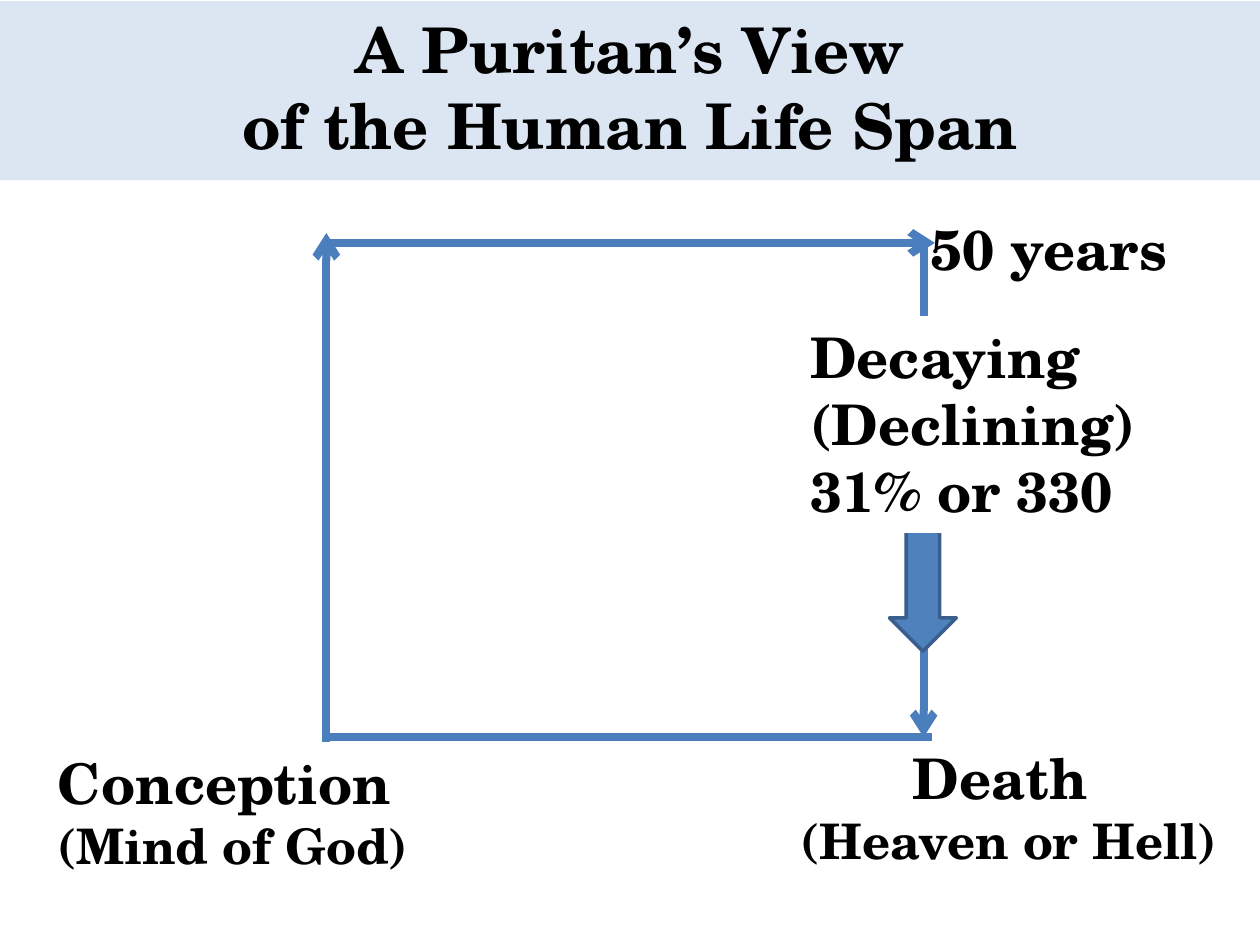
from lxml import etree
from pptx import Presentation
from pptx.dml.color import RGBColor
from pptx.enum.shapes import MSO_CONNECTOR, MSO_SHAPE
from pptx.enum.text import MSO_ANCHOR, MSO_AUTO_SIZE, PP_ALIGN
from pptx.oxml.ns import qn
from pptx.util import Pt

LEFT, CENTER = PP_ALIGN.LEFT, PP_ALIGN.CENTER
RECTANGLE, RIGHT_ARROW = MSO_SHAPE.RECTANGLE, MSO_SHAPE.RIGHT_ARROW
TOP, MIDDLE = MSO_ANCHOR.TOP, MSO_ANCHOR.MIDDLE
STRAIGHT, NO_AUTOFIT = MSO_CONNECTOR.STRAIGHT, MSO_AUTO_SIZE.NONE

FONT = "TeX Gyre Schola"
COLORS = {
    "text": "000000",
    "paper": "FFFFFF",
    "band": "DCE6F2",
    "span": "4B7EBC",
    "decline": "4F81BD",
    "decline edge": "3A5F8C",
}

TITLE = [("A Puritan’s View", 36), ("of the Human Life Span", 36)]
DEATH = [("Death ", 32), ("(Heaven or Hell)", 28)]
CONCEPTION = [("Conception ", 32), ("(Mind of God)", 28)]
DECAY = [("Decaying", 32), ("(Declining)", 32), ("31% or 330", 32)]
AGE = [("50 years", 32)]

BIRTH_X, DEATH_X = 186.5, 527.8
PEAK_Y, END_Y = 138.8, 421.2
LIFE_LINES = [
    ((BIRTH_X, 463), (BIRTH_X, 133.2), True),
    ((BIRTH_X - 0.7, PEAK_Y), (534.2, PEAK_Y), True),
    ((DEATH_X, PEAK_Y - 0.6), (DEATH_X, END_Y), True),
    ((532.8, END_Y), (184.3, END_Y), False),
]


def rgb(name):
    return RGBColor.from_string(COLORS[name])


def write(frame, lines, align, anchor=TOP):
    frame.word_wrap = True
    frame.auto_size = NO_AUTOFIT
    frame.vertical_anchor = anchor
    for i, (line, size) in enumerate(lines):
        paragraph = frame.paragraphs[0] if i == 0 else frame.add_paragraph()
        paragraph.text = line
        paragraph.alignment = align
        font = paragraph.font
        font.name, font.size, font.bold = FONT, Pt(size), True
        font.color.rgb = rgb("text")


def add_label(slide, lines, box, align):
    label = slide.shapes.add_textbox(*map(Pt, box))
    write(label.text_frame, lines, align)
    return label


def add_block(slide, preset, box, fill):
    block = slide.shapes.add_shape(preset, *map(Pt, box))
    block.shadow.inherit = False
    block.fill.solid()
    block.fill.fore_color.rgb = rgb(fill)
    block.line.fill.background()
    return block


def add_life_line(slide, start, end, has_arrow):
    life_line = slide.shapes.add_connector(STRAIGHT, *map(Pt, start + end))
    life_line.line.color.rgb = rgb("span")
    life_line.line.width = Pt(4.5)
    if has_arrow:
        etree.SubElement(life_line.line._get_or_add_ln(), qn("a:tailEnd"), type="arrow")
    etree.SubElement(life_line._element.spPr, qn("a:effectLst"))


def main():
    deck = Presentation()
    deck.slide_width, deck.slide_height = Pt(720), Pt(540)
    slide = deck.slides.add_slide(deck.slide_layouts[5])

    band = add_block(slide, RECTANGLE, (0, 0.7, 720, 102.3), "band")
    slide.shapes._spTree.insert(2, band._element)
    title = slide.shapes.title
    title.left, title.top, title.width, title.height = map(Pt, (0, 2.2, 720, 94.3))
    write(title.text_frame, TITLE, CENTER, MIDDLE)

    add_label(slide, DEATH, (444.2, 421.2, 264.2, 80), CENTER)
    for start, end, has_arrow in LIFE_LINES:
        add_life_line(slide, start, end, has_arrow)

    conception = add_block(slide, RECTANGLE, (23.8, 424.1, 218.2, 80), "paper")
    write(conception.text_frame, CONCEPTION, CENTER)

    decline = add_block(slide, RIGHT_ARROW, (488.9, 314.6, 77, 38.2), "decline")
    decline.rotation = 90
    decline.line.color.rgb = rgb("decline edge")
    decline.line.width = Pt(2)

    decay = add_block(slide, RECTANGLE, (455.8, 180.7, 210.2, 123.8), "paper")
    write(decay.text_frame, DECAY, LEFT)

    add_label(slide, AGE, (524.5, 118.8, 162, 46), LEFT)
    deck.save("out.pptx")


if __name__ == "__main__":
    main()
